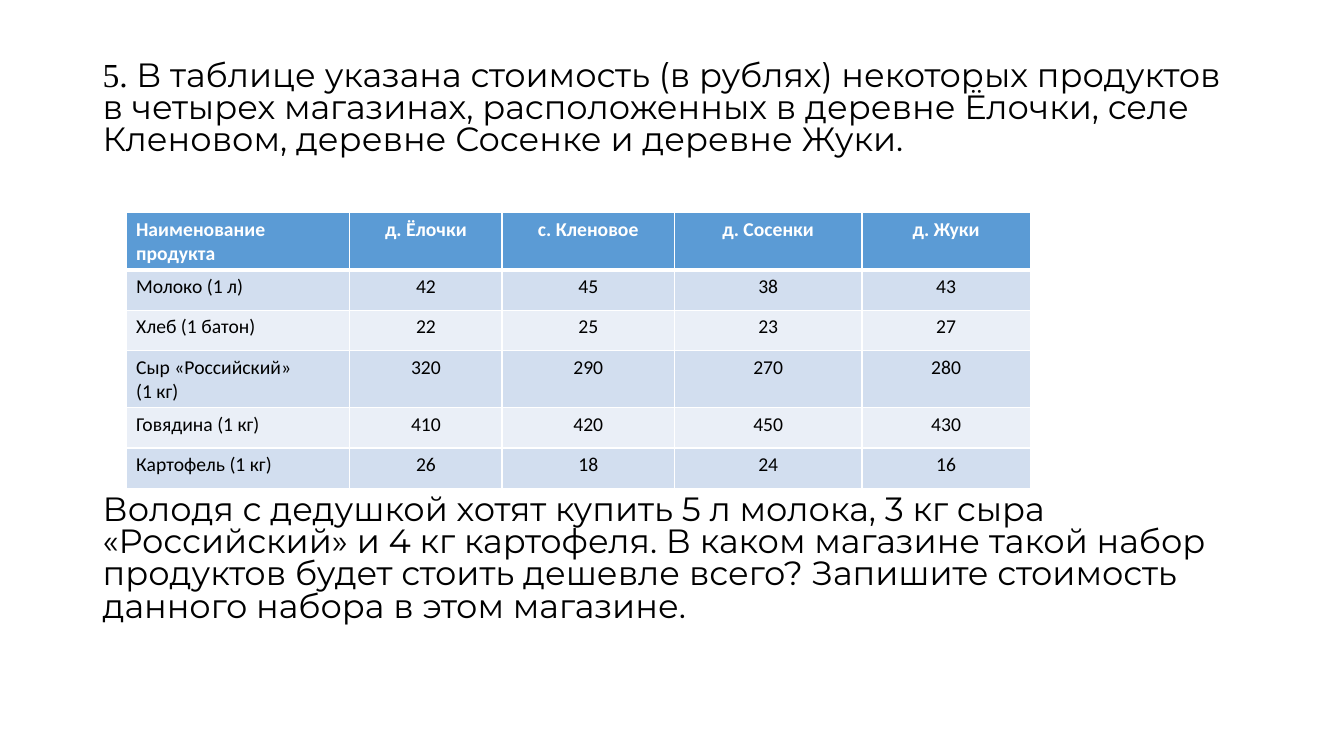
from dataclasses import dataclass

from lxml import etree
from pptx import Presentation
from pptx.dml.color import RGBColor
from pptx.enum.text import PP_ALIGN
from pptx.oxml.ns import qn
from pptx.util import Inches, Pt

LEFT, CENTER = PP_ALIGN.LEFT, PP_ALIGN.CENTER


@dataclass(frozen=True)
class Theme:
    text: str = "000000"
    white: str = "FFFFFF"
    header: str = "5B9BD5"
    bands: tuple = ("D2DEEF", "EAEFF7")
    number_font: str = "Times New Roman"
    body_font: str = "Montserrat"
    table_font: str = "Calibri"
    body_size: int = 24
    table_size: int = 14
    border: int = 1
    header_border: int = 3


THEME = Theme()

# Each paragraph: space before in points, then runs of (text, font)
TASK = [
    (0, [("5. ", THEME.number_font),
         ("В таблице указана стоимость (в рублях) некоторых продуктов в четырех "
          "магазинах, расположенных в деревне Ёлочки, селе Кленовом, деревне "
          "Сосенке и деревне Жуки.", THEME.body_font)]),
    (241, [("Володя с дедушкой хотят купить 5 л молока, 3 кг сыра «Российский» и "
            "4 кг картофеля. В каком магазине такой набор продуктов будет стоить "
            "дешевле всего? Запишите стоимость данного набора в этом магазине.",
            THEME.body_font)]),
]

PRICES = [
    ("Наименование продукта", "д. Ёлочки", "с. Кленовое", "д. Сосенки", "д. Жуки"),
    ("Молоко (1 л)", 42, 45, 38, 43),
    ("Хлеб (1 батон)", 22, 25, 23, 27),
    ("Сыр «Российский»\n(1 кг)", 320, 290, 270, 280),
    ("Говядина (1 кг)", 410, 420, 450, 430),
    ("Картофель (1 кг)", 26, 18, 24, 16),
]
COL_WIDTHS = (2.22, 1.51, 1.71, 1.86, 1.67)
ROW_HEIGHT, TALL_ROW_HEIGHT = 0.4, 0.56
TALL_ROWS = (0, 3)


def format_font(font, color, **values):
    for name, value in values.items():
        setattr(font, name, value)
    font.color.rgb = RGBColor.from_string(color)


def add_task(s, left, top, width, height):
    """Task text with a gap for the price table."""
    box = s.shapes.add_textbox(*map(Inches, (left, top, width, height)))
    tf = box.text_frame
    tf.word_wrap = True
    for i, (space, runs) in enumerate(TASK):
        p = tf.add_paragraph() if i else tf.paragraphs[0]
        p.line_spacing = 0.8
        p.space_before = Pt(space)
        for text, font in runs:
            r = p.add_run()
            r.text = text
            format_font(r.font, THEME.text, name=font, size=Pt(THEME.body_size))


def set_borders(cell, top, bottom):
    widths = {"lnL": THEME.border, "lnR": THEME.border, "lnT": top, "lnB": bottom}
    tc_pr = cell._tc.get_or_add_tcPr()
    # Border lines must come before the cell fill
    for i, (side, width) in enumerate(widths.items()):
        ln = etree.Element(qn(f"a:{side}"), w=str(Pt(width)))
        fill = etree.SubElement(ln, qn("a:solidFill"))
        etree.SubElement(fill, qn("a:srgbClr"), val=THEME.white)
        tc_pr.insert(i, ln)


def add_cell(cell, value, row, col):
    header = row == 0
    fill = THEME.header if header else THEME.bands[(row - 1) % 2]
    cell.fill.solid()
    cell.fill.fore_color.rgb = RGBColor.from_string(fill)
    set_borders(cell,
                THEME.header_border if row == 1 else THEME.border,
                THEME.header_border if header else THEME.border)
    cell.text = str(value)
    for p in cell.text_frame.paragraphs:
        p.alignment = CENTER if col else LEFT
        for r in p.runs:
            format_font(r.font, THEME.white if header else THEME.text,
                        name=THEME.table_font, size=Pt(THEME.table_size), bold=header)


def add_prices(s, left, top):
    """Table of prices by village."""
    heights = [TALL_ROW_HEIGHT if i in TALL_ROWS else ROW_HEIGHT
               for i in range(len(PRICES))]
    box = (left, top, sum(COL_WIDTHS), sum(heights))
    table = s.shapes.add_table(len(PRICES), len(COL_WIDTHS), *map(Inches, box)).table
    for column, width in zip(table.columns, COL_WIDTHS):
        column.width = Inches(width)
    for row, height in zip(table.rows, heights):
        row.height = Inches(height)
    for i, values in enumerate(PRICES):
        for j, value in enumerate(values):
            add_cell(table.cell(i, j), value, i, j)


def main():
    prs = Presentation()
    prs.slide_width, prs.slide_height = Inches(13.33), Inches(7.5)
    s = prs.slides.add_slide(prs.slide_layouts[6])
    add_task(s, 0.92, 0.56, 11.5, 6.2)
    add_prices(s, 1.25, 2.11)
    prs.save("out.pptx")


if __name__ == "__main__":
    main()
